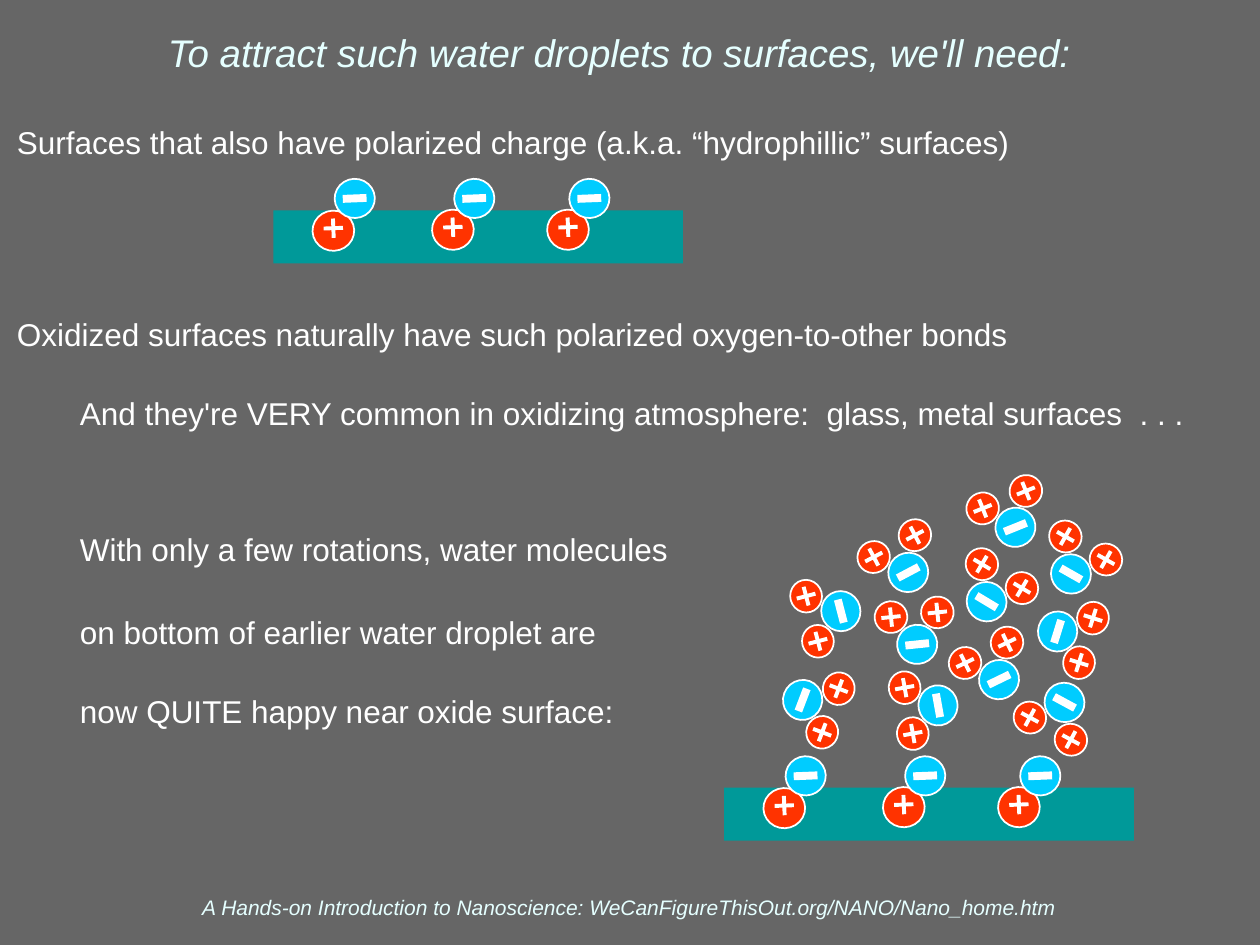
import math

import pptx
import pptx.dml.color
import pptx.enum.shapes
import pptx.enum.text
import pptx.oxml.ns
import pptx.util
from lxml import etree

Cm = pptx.util.Cm
Pt = pptx.util.Pt
MSO_SHAPE = pptx.enum.shapes.MSO_SHAPE
ALIGN = pptx.enum.text.PP_ALIGN
ANCHOR = pptx.enum.text.MSO_ANCHOR

COLORS = {
    "background": "666666",
    "heading": "E5FFFF",
    "white": "FFFFFF",
    "surface": "009999",
    "positive": "FF3300",
    "negative": "00CCFF",
}

# Text, left indent in cm, space before in points
BODY = [
    ("Surfaces that also have polarized charge (a.k.a. “hydrophillic” surfaces)", 0, 0),
    ("Oxidized surfaces naturally have such polarized oxygen-to-other bonds", 0, 88),
    ("And they're VERY common in oxidizing atmosphere:  glass, metal surfaces  . . .", 1.27, 23.3),
    ("With only a few rotations, water molecules", 1.27, 56.5),
    ("on bottom of earlier water droplet are", 1.27, 25.5),
    ("now QUITE happy near oxide surface:", 1.27, 23.3),
]

# Oxygen centre within the droplet box in cm, rotation in degrees
MOLECULES = [
    (2.74, 3.49, 354.2), (4.14, 2.63, 30.9), (4.39, 4.2, 334.1),
    (2.56, 2.04, 332.1), (3.16, 4.72, 259.9), (5.57, 3.23, 107.4),
    (5.71, 4.66, 208.4), (5.84, 2.07, 29.6), (1.2, 2.82, 255.3),
    (0.43, 4.61, 110.8), (4.72, 1.13, 338),
]

# Positive ends of the surface bonds, from the slab's corner in cm
BONDS = [(1.21, 0.41), (3.62, 0.39), (5.94, 0.39)]
BOND_ANGLE = 177.7


def rgb(name):
    return pptx.dml.color.RGBColor.from_string(COLORS[name])


def turn(x, y, angle):
    """Rotate an offset clockwise on the slide."""
    a = math.radians(angle)
    return x * math.cos(a) - y * math.sin(a), x * math.sin(a) + y * math.cos(a)


def add_paragraph(tf, text, first=False, size=18, color="white", italic=False,
                  align=ALIGN.LEFT, indent=0, before=0):
    p = tf.paragraphs[0] if first else tf.add_paragraph()
    p.alignment = align
    if indent:
        p._p.get_or_add_pPr().set("marL", str(Cm(indent)))
    if before:
        p.space_before = Pt(before)
    r = p.add_run()
    r.text = text
    r.font.name = "Arial"
    r.font.size = Pt(size)
    r.font.italic = italic
    r.font.color.rgb = rgb(color)


def add_text_frame(slide, left, top, width, height, anchor=ANCHOR.TOP):
    sp = slide.shapes.add_textbox(Cm(left), Cm(top), Cm(width), Cm(height))
    tf = sp.text_frame
    tf.word_wrap = True
    tf.vertical_anchor = anchor
    tf.margin_left = tf.margin_right = Cm(0.13)
    tf.margin_top = tf.margin_bottom = Cm(0.13)
    return tf


def add_line(shapes, x, y, length, angle, weight):
    """Draw a white line centred on x, y."""
    dx, dy = turn(length / 2, 0, angle)
    line = shapes.add_connector(pptx.enum.shapes.MSO_CONNECTOR.STRAIGHT,
                                Cm(x - dx), Cm(y - dy), Cm(x + dx), Cm(y + dy))
    line.line.color.rgb = rgb("white")
    line.line.width = Pt(weight)
    etree.SubElement(line._element.spPr, pptx.oxml.ns.qn("a:effectLst"))


def add_ball(shapes, x, y, width, height, angle, color):
    sp = shapes.add_shape(MSO_SHAPE.OVAL, Cm(x - width / 2), Cm(y - height / 2),
                          Cm(width), Cm(height))
    sp.rotation = angle
    sp.shadow.inherit = False
    sp.fill.solid()
    sp.fill.fore_color.rgb = rgb(color)
    sp.line.color.rgb = rgb("white")
    sp.line.width = Pt(1)


def add_positive(shapes, x, y, angle, width=0.66, height=0.64, rise=0):
    add_ball(shapes, x, y, width, height, angle, "positive")
    for arm in (angle, angle + 90):
        add_line(shapes, x, y - rise, 0.39, arm, 2.25)


def add_negative(shapes, x, y, angle):
    add_ball(shapes, x, y, 0.81, 0.79, angle, "negative")
    add_line(shapes, x, y, 0.48, angle, 4.5)


def add_surface(shapes, left, top, width=8.26, height=1.07):
    """Oxide slab with polarized bonds along its upper edge."""
    slab = shapes.add_shape(MSO_SHAPE.RECTANGLE, Cm(left), Cm(top), Cm(width), Cm(height))
    slab.shadow.inherit = False
    slab.fill.solid()
    slab.fill.fore_color.rgb = rgb("surface")
    slab.line.fill.background()
    for dx, dy in BONDS:
        x, y = left + dx, top + dy
        add_positive(shapes, x, y, BOND_ANGLE, 0.84, 0.81, rise=0.05)
        add_negative(shapes, x + 0.43, top - 0.24, BOND_ANGLE)


def add_droplet(shapes, left, top):
    """Water molecules, each with two hydrogens beside its oxygen."""
    for dx, dy, angle in MOLECULES:
        x, y = left + dx, top + dy
        for side in (-0.47, 0.47):
            hx, hy = turn(side, -0.6, angle)
            add_positive(shapes, x + hx, y + hy, angle)
        add_negative(shapes, x, y, angle)


def add_body(slide, left, top, width, height):
    tf = add_text_frame(slide, left, top, width, height)
    for i, (text, indent, before) in enumerate(BODY):
        add_paragraph(tf, text, first=i == 0, indent=indent, before=before)


def add_heading(slide, text, left, top, width, height, size, anchor):
    tf = add_text_frame(slide, left, top, width, height, anchor)
    add_paragraph(tf, text, first=True, size=size, color="heading",
                  italic=True, align=ALIGN.CENTER)


def main():
    prs = pptx.Presentation()
    prs.slide_width, prs.slide_height = Cm(25.4), Cm(19.05)
    slide = prs.slides.add_slide(prs.slide_layouts[6])
    slide.background.fill.solid()
    slide.background.fill.fore_color.rgb = rgb("background")

    add_heading(slide, "A Hands-on Introduction to Nanoscience: "
                "WeCanFigureThisOut.org/NANO/Nano_home.htm",
                0.84, 17.93, 23.7, 0.74, 12, ANCHOR.BOTTOM)
    add_heading(slide, "To attract such water droplets to surfaces, we'll need:",
                0.42, 0.2, 24.13, 1.7, 22, ANCHOR.MIDDLE)
    add_body(slide, 0.21, 2.36, 25.19, 16.6)

    add_surface(slide.shapes.add_group_shape().shapes, 5.51, 4.24)
    wetted = slide.shapes.add_group_shape().shapes
    add_droplet(wetted, 15.75, 9.5)
    add_surface(wetted, 14.6, 15.88)
    prs.save("out.pptx")


if __name__ == "__main__":
    main()
